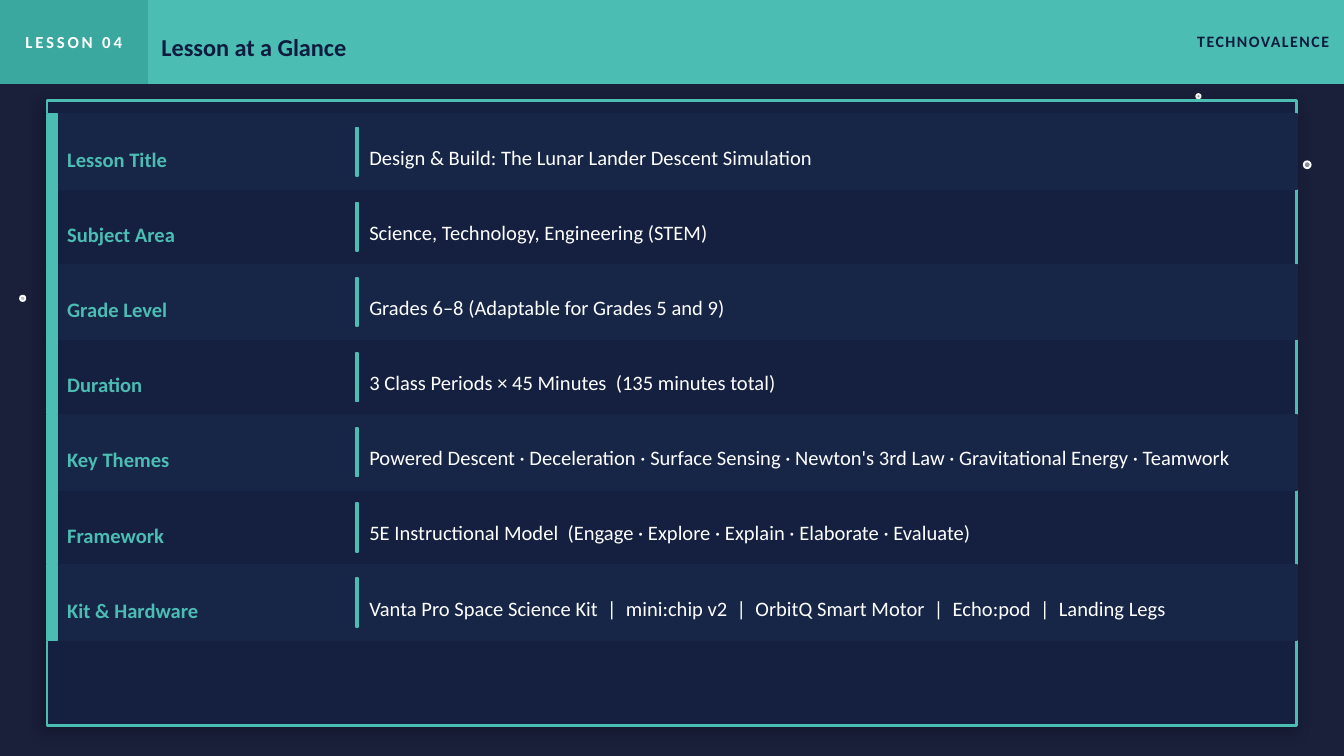
from dataclasses import dataclass

import pptx
import pptx.dml.color
import pptx.enum.shapes
import pptx.enum.text
import pptx.oxml
import pptx.oxml.ns
import pptx.util
from pptx.util import Cm

SHAPE = pptx.enum.shapes.MSO_SHAPE
ALIGN = pptx.enum.text.PP_ALIGN


@dataclass(frozen=True)
class Theme:
    font: str = "Calibri"
    night: str = "1A1F3A"
    panel: str = "152040"
    band: str = "172547"
    teal: str = "4BBDB3"
    deep_teal: str = "3AA89E"
    navy: str = "0D1B3E"
    white: str = "FFFFFF"
    title_size: float = 13
    row_size: float = 11
    tag_size: float = 9
    brand_size: float = 8.5


@dataclass(frozen=True)
class Box:
    left: float
    top: float
    width: float
    height: float

    def emu(self) -> tuple:
        return Cm(self.left), Cm(self.top), Cm(self.width), Cm(self.height)


@dataclass(frozen=True)
class Style:
    size: float
    color: str
    bold: bool = False
    spacing: float = 0
    align: ALIGN = ALIGN.LEFT
    inset_top: float = 0
    inset_right: float = 0


@dataclass(frozen=True)
class Star:
    left: float
    top: float
    size: float
    opacity: int


@dataclass(frozen=True)
class Row:
    label: str
    value: str


THEME = Theme()
SLIDE_WIDTH, SLIDE_HEIGHT = 25.4, 14.29
HEADER_HEIGHT = 1.57
PANEL = Box(0.89, 1.9, 23.62, 11.81)
ROWS_TOP, ROW_HEIGHT = 2.16, 1.42
TEXT_PAD, RULE_PAD = 0.13, 0.25

TAG = Style(THEME.tag_size, THEME.white, True, 1.5, ALIGN.CENTER)
TITLE = Style(THEME.title_size, THEME.navy, True, inset_top=0.2)
BRAND = Style(THEME.brand_size, THEME.navy, True, 0.8, ALIGN.RIGHT, inset_right=0.28)
LABEL = Style(THEME.row_size, THEME.teal, True, inset_top=0.28)
VALUE = Style(THEME.row_size, THEME.white, inset_top=0.2)

STARS = [
    Star(22.61, 1.78, 0.08, 60),
    Star(24.64, 3.05, 0.13, 50),
    Star(0.38, 5.59, 0.1, 70),
]
ROWS = [
    Row("Lesson Title", "Design & Build: The Lunar Lander Descent Simulation"),
    Row("Subject Area", "Science, Technology, Engineering (STEM)"),
    Row("Grade Level", "Grades 6–8 (Adaptable for Grades 5 and 9)"),
    Row("Duration", "3 Class Periods × 45 Minutes  (135 minutes total)"),
    Row("Key Themes", "Powered Descent · Deceleration · Surface Sensing · "
        "Newton's 3rd Law · Gravitational Energy · Teamwork"),
    Row("Framework", "5E Instructional Model  (Engage · Explore · Explain · Elaborate · Evaluate)"),
    Row("Kit & Hardware", "Vanta Pro Space Science Kit  |  mini:chip v2  |  "
        "OrbitQ Smart Motor  |  Echo:pod  |  Landing Legs"),
]


def rgb(value: str) -> pptx.dml.color.RGBColor:
    return pptx.dml.color.RGBColor.from_string(value)


def add_block(s, box: Box, fill: str, line: str = "", weight: float = 1, kind=SHAPE.RECTANGLE):
    sp = s.shapes.add_shape(kind, *box.emu())
    sp.shadow.inherit = False
    sp.fill.solid()
    sp.fill.fore_color.rgb = rgb(fill)
    sp.line.color.rgb = rgb(line or fill)
    sp.line.width = pptx.util.Pt(weight)
    return sp


def add_star(s, star: Star) -> None:
    box = Box(star.left, star.top, star.size, star.size)
    sp = add_block(s, box, THEME.white, kind=SHAPE.OVAL)
    color = sp._element.spPr.find(pptx.oxml.ns.qn("a:solidFill"))[0]
    color.append(pptx.oxml.parse_xml(
        f'<a:alpha {pptx.oxml.ns.nsdecls("a")} val="{star.opacity * 1000}"/>'))


def add_soft_shadow(sp) -> None:
    effects = sp._element.spPr.find(pptx.oxml.ns.qn("a:effectLst"))
    blur, distance = pptx.util.Pt(8), pptx.util.Pt(3)
    effects.append(pptx.oxml.parse_xml(
        f'<a:outerShdw {pptx.oxml.ns.nsdecls("a")} blurRad="{blur}" dist="{distance}" '
        f'dir="{135 * 60000}" algn="bl" rotWithShape="0">'
        '<a:srgbClr val="000000"><a:alpha val="25000"/></a:srgbClr></a:outerShdw>'))


def set_text(sp, text: str, style: Style) -> None:
    tf = sp.text_frame
    tf.text = text
    tf.word_wrap = True
    tf.auto_size = pptx.enum.text.MSO_AUTO_SIZE.NONE
    tf.vertical_anchor = pptx.enum.text.MSO_ANCHOR.MIDDLE
    tf.margin_left = tf.margin_bottom = 0
    tf.margin_top = Cm(style.inset_top)
    tf.margin_right = Cm(style.inset_right)
    p = tf.paragraphs[0]
    p.alignment = style.align
    r = p.runs[0]
    r.font.name = THEME.font
    r.font.size = pptx.util.Pt(style.size)
    r.font.bold = style.bold
    r.font.color.rgb = rgb(style.color)
    if style.spacing:
        r._r.get_or_add_rPr().set("spc", str(round(style.spacing * 100)))


def add_text(s, box: Box, text: str, style: Style) -> None:
    set_text(s.shapes.add_textbox(*box.emu()), text, style)


def add_header(s) -> None:
    tag_box = Box(0, 0, 2.79, HEADER_HEIGHT)
    add_block(s, Box(0, 0, SLIDE_WIDTH, HEADER_HEIGHT), THEME.teal)
    add_block(s, tag_box, THEME.deep_teal)
    add_text(s, tag_box, "LESSON 04", TAG)
    title = s.shapes.title
    title.left, title.top, title.width, title.height = Box(3.05, 0, 19.05, HEADER_HEIGHT).emu()
    set_text(title, "Lesson at a Glance", TITLE)
    s.shapes._spTree.append(title._element)
    add_text(s, Box(19.56, 0, 5.84, HEADER_HEIGHT), "TECHNOVALENCE", BRAND)


def add_row(s, index: int, row: Row) -> None:
    top = ROWS_TOP + index * ROW_HEIGHT
    text_top, text_height = top + TEXT_PAD, ROW_HEIGHT - 2 * TEXT_PAD
    if index % 2 == 0:
        add_block(s, Box(PANEL.left, top, PANEL.width, ROW_HEIGHT), THEME.band)
    add_block(s, Box(PANEL.left, top, 0.2, ROW_HEIGHT), THEME.teal)
    add_text(s, Box(1.27, text_top, 5.33, text_height), row.label, LABEL)
    add_block(s, Box(6.73, top + RULE_PAD, 0.03, ROW_HEIGHT - 2 * RULE_PAD), THEME.teal)
    add_text(s, Box(6.98, text_top, 17.15, text_height), row.value, VALUE)


def main() -> None:
    prs = pptx.Presentation()
    prs.slide_width, prs.slide_height = Cm(SLIDE_WIDTH), Cm(SLIDE_HEIGHT)
    s = prs.slides.add_slide(prs.slide_layouts[5])
    s.background.fill.solid()
    s.background.fill.fore_color.rgb = rgb(THEME.night)
    for star in STARS:
        add_star(s, star)
    add_header(s)
    add_soft_shadow(add_block(s, PANEL, THEME.panel, THEME.teal, 1.5))
    for index, row in enumerate(ROWS):
        add_row(s, index, row)
    prs.save("out.pptx")


if __name__ == "__main__":
    main()
